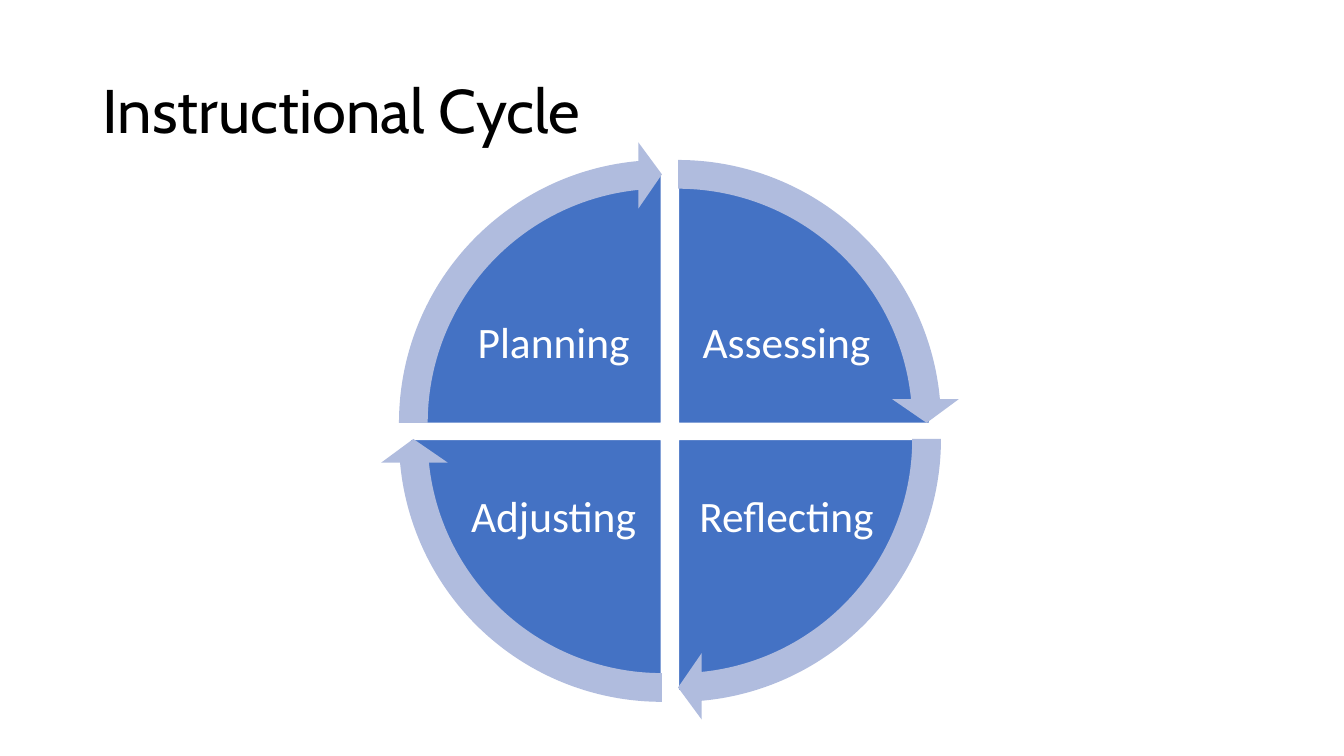
"""Build a slide showing the four-stage instructional cycle."""
from pptx import Presentation
from pptx.dml.color import RGBColor
from pptx.enum.shapes import MSO_SHAPE
from pptx.enum.text import MSO_ANCHOR, PP_ALIGN
from pptx.util import Inches, Pt

TITLE = "Instructional Cycle"
STAGES = [
    ("Assessing", 1, 0, 162),
    ("Reflecting", 1, 1, 0),
    ("Adjusting", 0, 1, 54),
    ("Planning", 0, 0, 108),
]

BLACK = RGBColor(0x00, 0x00, 0x00)
WHITE = RGBColor(0xFF, 0xFF, 0xFF)
BLUE = RGBColor(0x44, 0x72, 0xC4)
PALE_BLUE = RGBColor(0xB0, 0xBC, 0xDE)

QUARTER_TURN = 54
FULL_TURN = 216
HEAD_ANGLE = 3.275
PIE_SIZE, PIE_LEFTS, PIE_TOPS = 4.98, (4.07, 4.24), (1.71, 1.87)
ARROW_SIZE, ARROW_LEFTS, ARROW_TOPS = 5.59, (3.77, 3.93), (1.4, 1.56)
LABEL_WIDTH, LABEL_HEIGHT = 1.84, 1.36
LABEL_LEFTS, LABEL_TOPS = (4.57, 6.88), (2.74, 4.46)


def add_text(slide, text, box, font_name, size, color, align, inset_x, inset_y):
    frame = slide.shapes.add_textbox(*map(Inches, box)).text_frame
    frame.word_wrap = True
    frame.vertical_anchor = MSO_ANCHOR.MIDDLE
    frame.margin_left = frame.margin_right = Inches(inset_x)
    frame.margin_top = frame.margin_bottom = Inches(inset_y)
    paragraph = frame.paragraphs[0]
    paragraph.text = text
    paragraph.alignment = align
    paragraph.line_spacing = 0.9
    paragraph.font.name = font_name
    paragraph.font.size = Pt(size)
    paragraph.font.color.rgb = color


def add_round(slide, preset, left, top, size, angles, fill):
    shape = slide.shapes.add_shape(preset, *map(Inches, (left, top, size, size)))
    shape.shadow.inherit = False
    shape.fill.solid()
    shape.fill.fore_color.rgb = fill
    for index, angle in enumerate(angles):
        shape.adjustments[index] = angle
    return shape


def main():
    prs = Presentation()
    prs.slide_width, prs.slide_height = Inches(13.33), Inches(7.5)
    slide = prs.slides.add_slide(prs.slide_layouts[6])
    add_text(slide, TITLE, (0.92, 0.4, 11.5, 1.45), "Cabin", 44, BLACK,
             PP_ALIGN.LEFT, 0.1, 0.05)

    for stage, column, row, start in STAGES:
        end = (start + QUARTER_TURN) % FULL_TURN
        quarter = add_round(slide, MSO_SHAPE.PIE, PIE_LEFTS[column], PIE_TOPS[row],
                            PIE_SIZE, (start, end), BLUE)
        quarter.line.color.rgb = WHITE
        quarter.line.width = Pt(1)
        label_box = (LABEL_LEFTS[column], LABEL_TOPS[row], LABEL_WIDTH, LABEL_HEIGHT)
        add_text(slide, stage, label_box, "Calibri", 31, WHITE,
                 PP_ALIGN.CENTER, 0.04, 0.04)

    for _, column, row, start in STAGES:
        tip = start + QUARTER_TURN - HEAD_ANGLE
        arrow = add_round(slide, MSO_SHAPE.CIRCULAR_ARROW, ARROW_LEFTS[column],
                          ARROW_TOPS[row], ARROW_SIZE,
                          (0.051, HEAD_ANGLE, tip, start, 0.059), PALE_BLUE)
        arrow.line.fill.background()

    prs.save("out.pptx")


if __name__ == "__main__":
    main()
